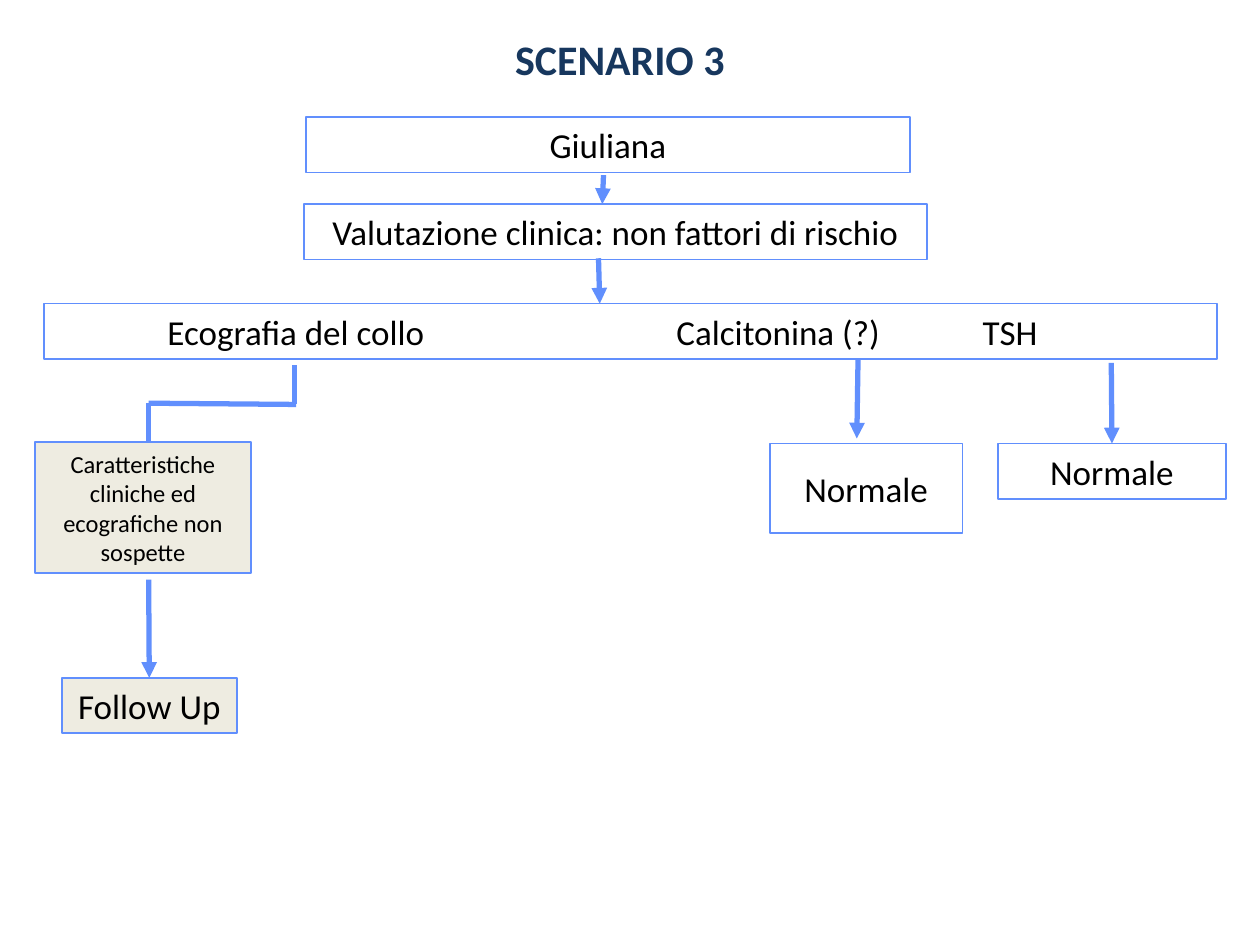
from dataclasses import dataclass

from lxml.etree import SubElement
from pptx import Presentation
from pptx.dml.color import RGBColor as RGB
from pptx.enum.shapes import MSO_CONNECTOR as LINK, MSO_SHAPE as SHAPE
from pptx.enum.text import MSO_ANCHOR as ANCHOR, PP_ALIGN as ALIGN
from pptx.oxml.ns import qn
from pptx.util import Inches, Pt


@dataclass(frozen=True)
class Theme:
    font: str = "Calibri"
    blue: RGB = RGB(0x61, 0x8F, 0xFD)
    navy: RGB = RGB(0x17, 0x37, 0x5E)
    sand: RGB = RGB(0xEE, 0xEC, 0xE1)
    black: RGB = RGB(0, 0, 0)
    title: Pt = Pt(24)
    body: Pt = Pt(20)
    small: Pt = Pt(14)
    border: Pt = Pt(1)
    arrow: Pt = Pt(3)


theme = Theme()


def style(shape, size, color, bold=False):
    """Centre the text of a shape and set its font."""
    frame = shape.text_frame
    frame.word_wrap = True
    frame.vertical_anchor = ANCHOR.MIDDLE
    para = frame.paragraphs[0]
    para.alignment = ALIGN.CENTER
    para.font.name = theme.font
    para.font.size = size
    para.font.bold = bold
    para.font.color.rgb = color


deck = Presentation()
deck.slide_width, deck.slide_height = Inches(10), Inches(7.5)
slide = deck.slides.add_slide(deck.slide_layouts[5])

title = slide.shapes.title
title.left, title.top = Inches(2.62), Inches(0.21)
title.width, title.height = Inches(4.6), Inches(0.51)
title.text = "SCENARIO 3"
style(title, theme.title, theme.navy, bold=True)

# Boxes: key, text, left, top, width, height, fill, type size
row = 0.44
boxes = {}
for key, text, left, top, width, height, fill, size in [
    ("patient", "Giuliana", 2.43, 0.93, 4.79, row, None, theme.body),
    ("clinic", "Valutazione clinica: non fattori di rischio",
     2.41, 1.62, 4.95, row, None, theme.body),
    ("tests", "\tEcografia del collo\tCalcitonina (?)\tTSH",
     0.35, 2.41, 9.31, row, None, theme.body),
    ("neck", "Caratteristiche cliniche ed ecografiche non sospette",
     0.28, 3.51, 1.71, 1.04, theme.sand, theme.small),
    ("calcitonin", "Normale", 6.11, 3.52, 1.53, 0.71, None, theme.body),
    ("tsh", "Normale", 7.92, 3.52, 1.81, row, None, theme.body),
    ("follow", "Follow Up", 0.49, 5.38, 1.39, row, theme.sand, theme.body),
]:
    box = slide.shapes.add_shape(
        SHAPE.RECTANGLE, Inches(left), Inches(top), Inches(width), Inches(height))
    box.shadow.inherit = False
    if fill is None:
        box.fill.background()
    else:
        box.fill.solid()
        box.fill.fore_color.rgb = fill
    box.line.color.rgb = theme.blue
    box.line.width = theme.border
    box.text_frame.text = text
    style(box, size, theme.black)
    boxes[key] = box

# The three tests stand at tab stops in one row
tests = boxes["tests"].text_frame.paragraphs[0]
tests.alignment = ALIGN.LEFT
props = tests._p.get_or_add_pPr()
tabs = props.makeelement(qn("a:tabLst"))
props.find(qn("a:defRPr")).addprevious(tabs)
for stop in (0.88, 4.92, 7.35):
    SubElement(tabs, qn("a:tab"), pos=str(Inches(stop)), algn="l")

# Links: start, end, arrowhead, box joined at its top
for start, end, head, goal in [
    ((4.79, 1.39), (4.78, 1.62), True, None),
    ((4.75, 2.05), (4.76, 2.41), True, None),
    ((2.34, 2.9), (2.34, 3.21), False, None),
    ((2.35, 3.21), (1.18, 3.2), False, None),
    ((1.18, 3.2), (1.18, 3.51), False, None),
    ((1.18, 4.6), (1.18, 5.38), True, "follow"),
    ((6.81, 2.85), (6.8, 3.48), True, None),
    ((8.82, 2.88), (8.82, 3.52), True, "tsh"),
]:
    link = slide.shapes.add_connector(
        LINK.STRAIGHT, *(Inches(value) for value in start + end))
    link.line.color.rgb = theme.blue
    link.line.width = theme.arrow
    if head:
        SubElement(link.line._get_or_add_ln(), qn("a:tailEnd"), type="triangle")
    SubElement(link._element.spPr, qn("a:effectLst"))
    if goal:
        link.end_connect(boxes[goal], 0)

deck.save("out.pptx")
